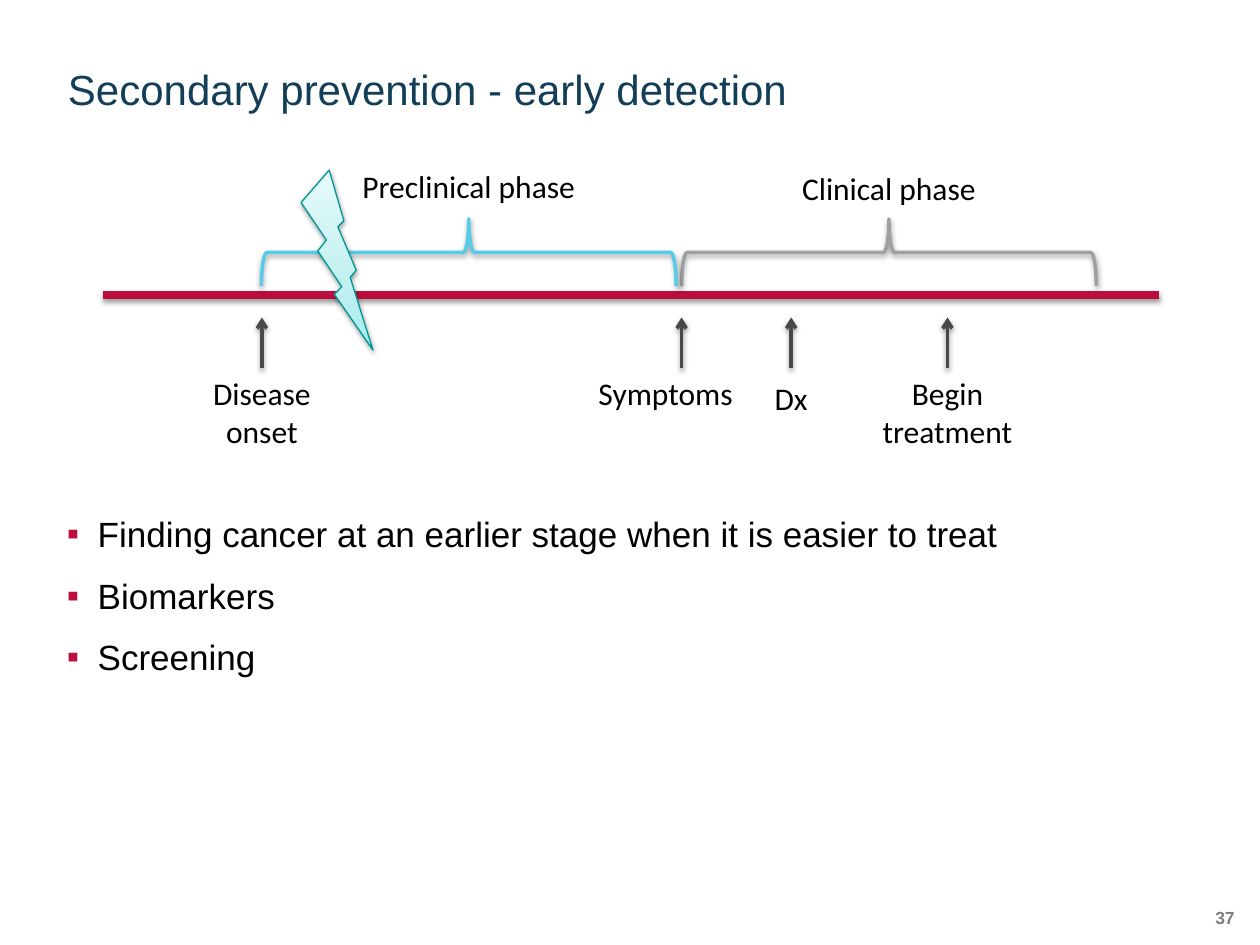
from copy import deepcopy

from lxml.etree import SubElement
from pptx import Presentation
from pptx.dml.color import RGBColor
from pptx.enum.shapes import MSO_CONNECTOR, MSO_SHAPE
from pptx.enum.text import MSO_ANCHOR, MSO_AUTO_SIZE, PP_ALIGN
from pptx.oxml.ns import qn
from pptx.util import Cm, Pt

COLORS = {
    "title": "123E57", "text": "000000", "accent": "BB0E3D", "number": "7F7F7F",
    "arrow": "484848", "preclinical": "57CCE8", "clinical": "A0A0A0", "bolt": "009696",
}
BOLT_STOPS = [(0, "A5EBEB"), (0.35, "C1F0F0"), (1, "E7FAFA")]
PHASES = [
    ("Preclinical phase", "preclinical", 7.37, 0),
    ("Clinical phase", "clinical", 15.84, 0.04),
]
EVENTS = [
    ("Disease onset", 3.2, 2.67, 1.8, {}),
    ("Symptoms", 11.66, 3.63, 1.02, {"shift": -0.11, "align": PP_ALIGN.LEFT}),
    ("Dx", 13.87, 1.83, 1.02, {"drop": 0.1}),
    ("Begin treatment", 17.02, 3.63, 1.8, {}),
]
BULLETS = [
    "Finding cancer at an earlier stage when it is easier to treat",
    "Biomarkers",
    "Screening",
]


def rgb(name):
    """Return the named colour."""
    return RGBColor.from_string(COLORS[name])


def format_text(frame, text, size=18, font="Calibri", color="text", bold=False,
                align=PP_ALIGN.CENTER, anchor=MSO_ANCHOR.TOP, inset=None, spacing=None):
    """Write one paragraph into a text frame and format it."""
    frame.word_wrap = True
    frame.vertical_anchor = anchor
    if inset is not None:
        frame.margin_left = frame.margin_right = Cm(inset)
        frame.margin_top = frame.margin_bottom = Cm(inset)
    para = frame.paragraphs[0]
    para.alignment = align
    para.line_spacing = spacing
    span = para.add_run()
    span.text = text
    span.font.size, span.font.name, span.font.bold = Pt(size), font, bold
    span.font.color.rgb = rgb(color)


def add_label(page, left, top, width, height, text, **text_format):
    """Add a text box and return it."""
    box = page.shapes.add_textbox(Cm(left), Cm(top), Cm(width), Cm(height))
    format_text(box.text_frame, text, **text_format)
    return box


def add_shadow(shape):
    """Give a shape or connector a soft shadow below it."""
    effects = SubElement(shape._element.spPr, qn("a:effectLst"))
    shadow = SubElement(effects, qn("a:outerShdw"), blurRad=str(Pt(3.1)),
                        dist=str(Pt(1.6)), dir="5400000", rotWithShape="0")
    tint = SubElement(shadow, qn("a:srgbClr"), val="000000")
    SubElement(tint, qn("a:alpha"), val="38000")


def add_line(page, start, end, color, weight, arrow=False, source=None):
    """Add a shadowed straight line, with an optional arrowhead and source box."""
    line = page.shapes.add_connector(MSO_CONNECTOR.STRAIGHT, *map(Cm, start + end))
    if source is not None:
        line.begin_connect(source, 0)
    line.line.color.rgb = rgb(color)
    line.line.width = Pt(weight)
    if arrow:
        SubElement(line.line._get_or_add_ln(), qn("a:tailEnd"), type="arrow")
    add_shadow(line)


def add_phase(page, center, top, text, color, drop):
    """Add a phase label above a brace that opens downwards."""
    width, depth, span = 6.83, 1.35, 8.36
    brace = page.shapes.add_shape(
        MSO_SHAPE.LEFT_BRACE, Cm(center - depth / 2), Cm(top + 1.84 - span / 2),
        Cm(depth), Cm(span))
    brace.rotation = 90
    brace.fill.background()
    brace.line.color.rgb = rgb(color)
    brace.line.width = Pt(2)
    add_shadow(brace)
    add_label(page, center - width / 2, top + drop, width, 1.02, text)


def add_event(page, center, top, text, width, height, shift=0, drop=0,
              align=PP_ALIGN.CENTER):
    """Add an event label with an arrow pointing up to the axis."""
    label = add_label(page, center + shift - width / 2, top + drop, width, height,
                      text, align=align)
    source = None if shift or drop else label
    add_line(page, (center, top), (center, top - 1.02), "arrow", 2, True, source)


def add_bolt(page, left, top, width, height):
    """Add the lightning bolt with its vertical gradient."""
    bolt = page.shapes.add_shape(MSO_SHAPE.LIGHTNING_BOLT, *map(Cm, (left, top, width, height)))
    bolt.fill.gradient()
    bolt.fill.gradient_angle = 90
    first = bolt._element.spPr.find(".//" + qn("a:gs"))
    first.addnext(deepcopy(first))
    for stop, (position, color) in zip(bolt.fill.gradient_stops, BOLT_STOPS):
        stop.position = position
        stop.color.rgb = RGBColor.from_string(color)
    bolt.line.color.rgb = rgb("bolt")
    bolt.line.width = Pt(0.75)
    add_shadow(bolt)


def add_timeline(page, left, top, width):
    """Add the disease timeline with phases, axis and events."""
    axis = top + 2.69
    add_line(page, (left, axis), (left + width, axis), "accent", 4.5)
    for text, x, label_width, height, options in EVENTS:
        add_event(page, left + x, axis + 1.48, text, label_width, height, **options)
    for text, color, x, drop in reversed(PHASES):
        add_phase(page, left + x, top, text, color, drop)
    add_bolt(page, left + 3.99, top + 0.18, 1.45, 3.63)


def add_bullets(page, left, top, width, height):
    """Add the bullet list."""
    box = page.shapes.add_textbox(*map(Cm, (left, top, width, height)))
    frame = box.text_frame
    frame.word_wrap = True
    frame.margin_left = frame.margin_right = frame.margin_top = frame.margin_bottom = 0
    for index, text in enumerate(BULLETS):
        para = frame.add_paragraph() if index else frame.paragraphs[0]
        properties = para._p.get_or_add_pPr()
        properties.set("marL", str(Cm(0.62)))
        properties.set("indent", str(Cm(-0.62)))
        tint = SubElement(properties, qn("a:buClr"))
        SubElement(tint, qn("a:srgbClr"), val=COLORS["accent"])
        SubElement(properties, qn("a:buFont"), typeface="Arial")
        SubElement(properties, qn("a:buChar"), char="▪")
        para.space_after = Pt(11)
        span = para.add_run()
        span.text = text
        span.font.size, span.font.name = Pt(20), "Arial"
        span.font.color.rgb = rgb("text")


def add_title(page, left, top, width, height, text):
    """Place and format the title placeholder."""
    title = page.shapes.title
    title.left, title.top, title.width, title.height = map(Cm, (left, top, width, height))
    title.text_frame.auto_size = MSO_AUTO_SIZE.NONE
    format_text(title.text_frame, text, size=24, font="Arial", color="title",
                align=PP_ALIGN.LEFT, anchor=MSO_ANCHOR.BOTTOM, inset=0, spacing=0.9)


def main():
    """Build the slide and save the deck."""
    deck = Presentation()
    deck.slide_width, deck.slide_height = Cm(25.4), Cm(19.05)
    page = deck.slides.add_slide(deck.slide_layouts[5])
    add_title(page, 1.37, 1.14, 22.68, 1.17, "Secondary prevention - early detection")
    add_bullets(page, 1.35, 10.34, 22.68, 6.96)
    add_timeline(page, 2.08, 3.25, 21.29)
    add_label(page, 24.03, 18.29, 0.86, 0.51, "37", size=10, font="Arial",
              color="number", bold=True, align=PP_ALIGN.RIGHT, inset=0)
    deck.save("out.pptx")


if __name__ == "__main__":
    main()
